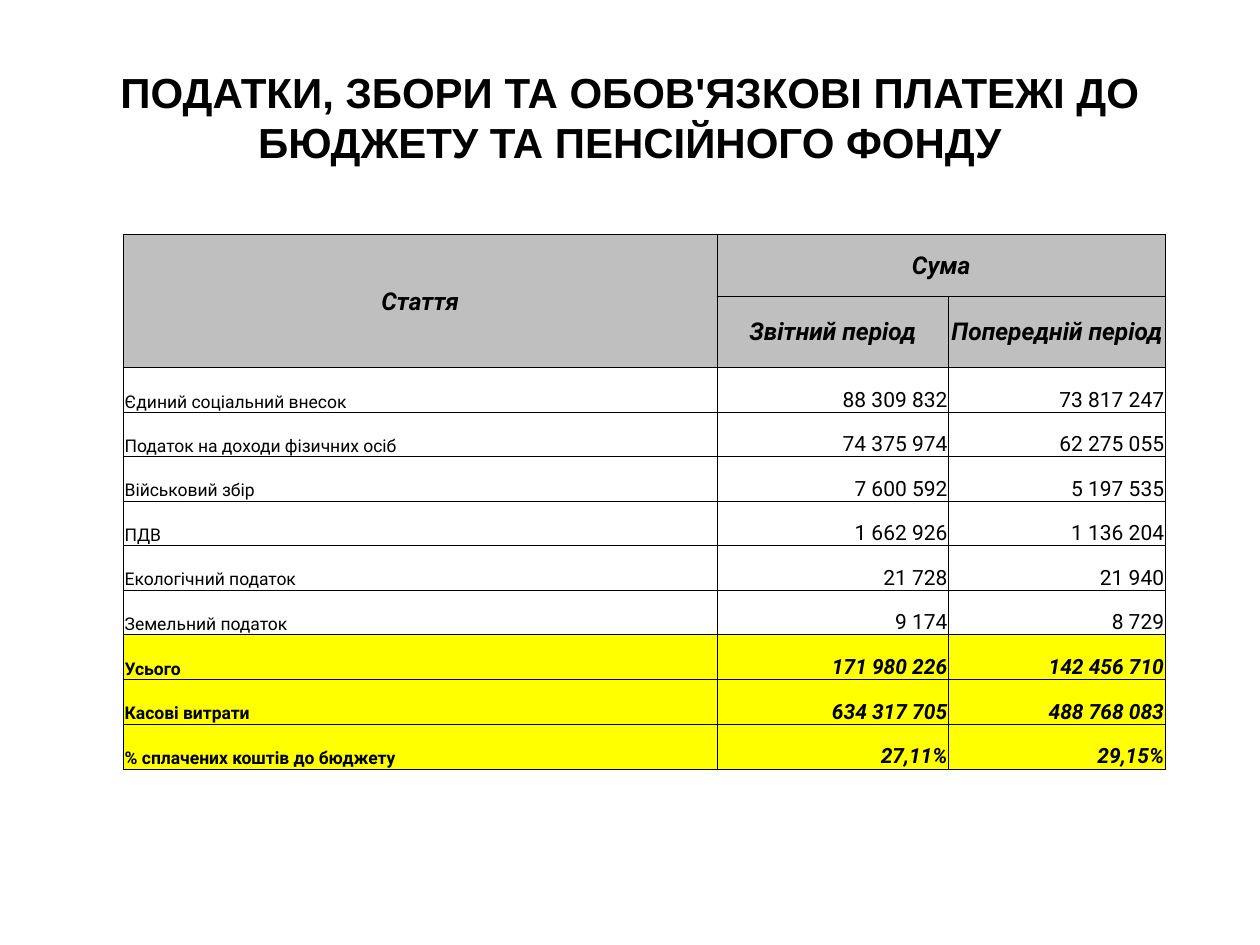
from dataclasses import dataclass

from lxml import etree
from pptx import Presentation
from pptx import util as u
from pptx.dml.color import RGBColor
from pptx.enum import text
from pptx.oxml import ns


@dataclass(frozen=True)
class Theme:
    ink: str = "000000"
    header_fill: str = "BFBFBF"
    total_fill: str = "FFFF00"
    title_font: str = "Arial"
    table_font: str = "Roboto"
    title_size: int = 24
    header_size: int = 14
    label_size: int = 10
    amount_size: int = 12
    border_width: float = 0.5


THEME = Theme()
ALIGN = text.PP_ALIGN
ANCHOR = text.MSO_ANCHOR

TITLE = "ПОДАТКИ, ЗБОРИ ТА ОБОВ'ЯЗКОВІ ПЛАТЕЖІ ДО БЮДЖЕТУ ТА ПЕНСІЙНОГО ФОНДУ"
HEADERS = [("Стаття", "Сума", ""), ("", "Звітний період", "Попередній період")]
TAXES = [
    ("Єдиний соціальний внесок", "88 309 832", "73 817 247"),
    ("Податок на доходи фізичних осіб", "74 375 974", "62 275 055"),
    ("Військовий збір", "7 600 592", "5 197 535"),
    ("ПДВ", "1 662 926", "1 136 204"),
    ("Екологічний податок", "21 728", "21 940"),
    ("Земельний податок", "9 174", "8 729"),
]
TOTALS = [
    ("Усього", "171 980 226", "142 456 710"),
    ("Касові витрати", "634 317 705", "488 768 083"),
    ("% сплачених коштів до бюджету", "27,11%", "29,15%"),
]
COLUMN_WIDTHS = [4.71, 1.84, 1.72]
ROW_HEIGHTS = [0.49, 0.57] + [0.353] * len(TAXES) + [0.356] * len(TOTALS)


def set_attributes(target, values):
    for name, value in values.items():
        setattr(target, name, value)


def write(frame, words, align, font, size, bold=False, italic=False):
    paragraph = frame.paragraphs[0]
    paragraph.alignment = align
    run = paragraph.add_run()
    run.text = words
    set_attributes(run.font, {"name": font, "size": u.Pt(size),
                              "bold": bold, "italic": italic})
    run.font.color.rgb = RGBColor.from_string(THEME.ink)


def add_borders(cell):
    """Draw all four edges; they must precede the fill in the cell properties."""
    properties = cell._tc.get_or_add_tcPr()
    for index, edge in enumerate(("lnL", "lnR", "lnT", "lnB")):
        line = etree.Element(ns.qn(f"a:{edge}"), w=str(u.Pt(THEME.border_width)))
        solid = etree.SubElement(line, ns.qn("a:solidFill"))
        etree.SubElement(solid, ns.qn("a:srgbClr"), val=THEME.ink)
        properties.insert(index, line)


def format_cell(cell, anchor, fill):
    set_attributes(cell, {
        "vertical_anchor": anchor,
        "margin_left": u.Inches(0.01),
        "margin_right": u.Inches(0.01),
        "margin_top": u.Inches(0.01),
        "margin_bottom": 0,
    })
    if fill:
        cell.fill.solid()
        cell.fill.fore_color.rgb = RGBColor.from_string(fill)
    else:
        cell.fill.background()
    add_borders(cell)


def fill_header_row(cells, captions):
    for cell, caption in zip(cells, captions):
        format_cell(cell, ANCHOR.MIDDLE, THEME.header_fill)
        if caption:
            write(cell.text_frame, caption, ALIGN.CENTER, THEME.table_font,
                  THEME.header_size, bold=True, italic=True)


def fill_amount_row(cells, values, total=False):
    for column, (cell, value) in enumerate(zip(cells, values)):
        format_cell(cell, ANCHOR.BOTTOM, THEME.total_fill if total else None)
        is_amount = column > 0
        write(cell.text_frame, value,
              ALIGN.RIGHT if is_amount else ALIGN.LEFT,
              THEME.table_font,
              THEME.amount_size if is_amount else THEME.label_size,
              bold=total, italic=total and is_amount)


def add_title(slide):
    title = slide.shapes.title
    set_attributes(title, {"left": u.Inches(0.5), "top": u.Inches(0.3),
                           "width": u.Inches(9), "height": u.Inches(1.25)})
    title.text_frame.vertical_anchor = ANCHOR.MIDDLE
    write(title.text_frame, TITLE, ALIGN.CENTER, THEME.title_font,
          THEME.title_size, bold=True)


def add_tax_table(slide):
    table = slide.shapes.add_table(
        len(ROW_HEIGHTS), len(COLUMN_WIDTHS), u.Inches(0.98), u.Inches(1.86),
        u.Inches(sum(COLUMN_WIDTHS)), u.Inches(sum(ROW_HEIGHTS))).table
    set_attributes(table, {"first_row": False, "horz_banding": False})
    for column, width in zip(table.columns, COLUMN_WIDTHS):
        column.width = u.Inches(width)
    for row, height in zip(table.rows, ROW_HEIGHTS):
        row.height = u.Inches(height)

    table.cell(0, 0).merge(table.cell(1, 0))
    table.cell(0, 1).merge(table.cell(0, 2))
    rows = iter(table.rows)
    for captions in HEADERS:
        fill_header_row(next(rows).cells, captions)
    for values in TAXES:
        fill_amount_row(next(rows).cells, values)
    for values in TOTALS:
        fill_amount_row(next(rows).cells, values, total=True)


def main():
    deck = Presentation()
    set_attributes(deck, {"slide_width": u.Inches(10), "slide_height": u.Inches(7.5)})
    slide = deck.slides.add_slide(deck.slide_layouts.get_by_name("Title Only"))
    add_title(slide)
    add_tax_table(slide)
    deck.save("out.pptx")


if __name__ == "__main__":
    main()
